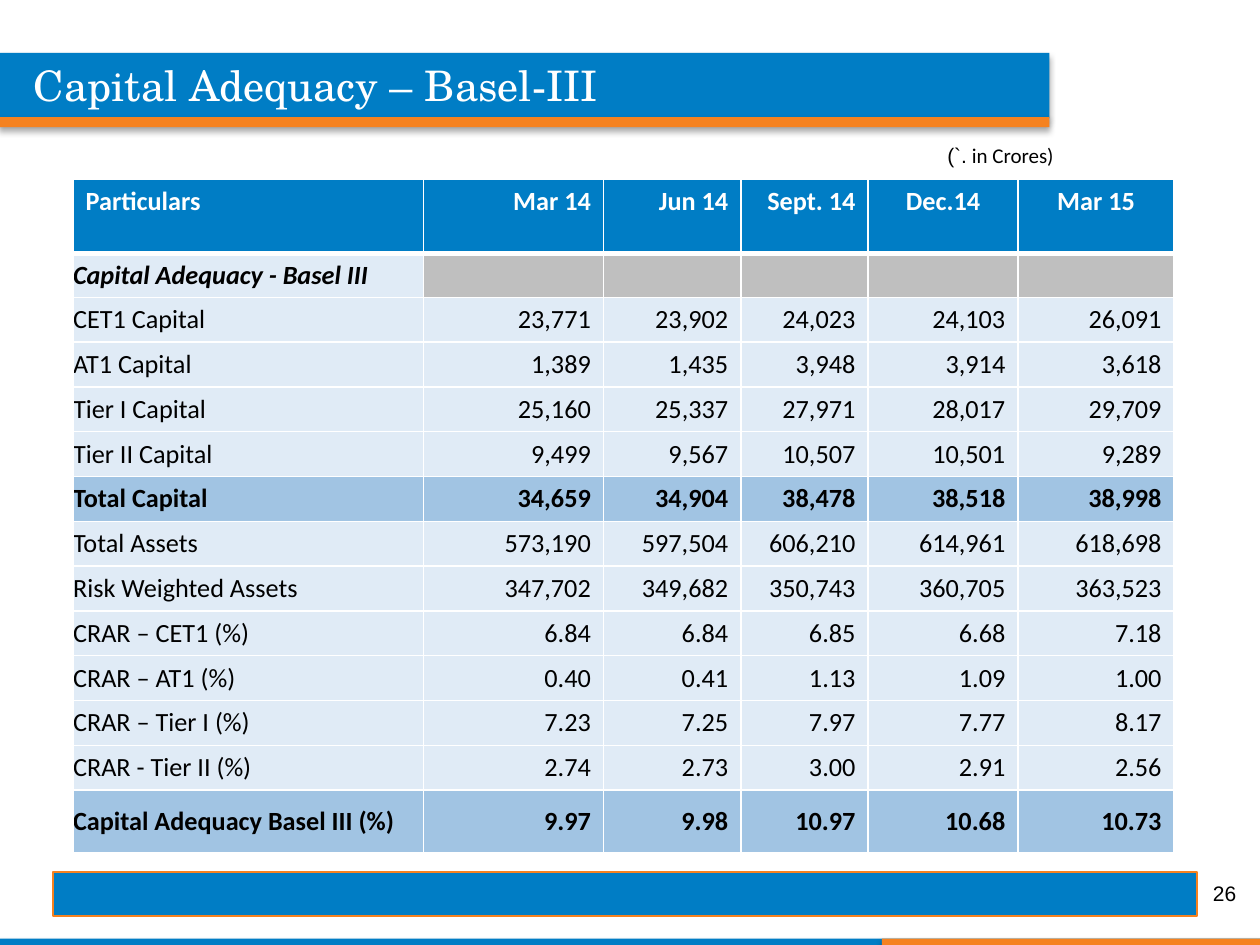
from pptx import Presentation
from pptx import util as u
from pptx.dml.color import RGBColor
from pptx.enum import shapes, text
from pptx.oxml import parse_xml
from pptx.oxml.ns import nsdecls

BLUE, ORANGE, WHITE, BLACK = "007DC5", "F58220", "FFFFFF", "000000"
PALE, MID, GREY = "E0EBF6", "A1C4E3", "BFBFBF"
LEFT, MIDDLE, RIGHT = text.PP_ALIGN.LEFT, text.PP_ALIGN.CENTER, text.PP_ALIGN.RIGHT

HEAD = ["Particulars", "Mar 14", "Jun 14", "Sept. 14", "Dec.14", "Mar 15"]
ROWS = [
    ["Capital Adequacy - Basel III", "", "", "", "", ""],
    ["CET1 Capital", "23,771", "23,902", "24,023", "24,103", "26,091"],
    ["AT1 Capital", "1,389", "1,435", "3,948", "3,914", "3,618"],
    ["Tier I Capital", "25,160", "25,337", "27,971", "28,017", "29,709"],
    ["Tier II Capital", "9,499", "9,567", "10,507", "10,501", "9,289"],
    ["Total Capital", "34,659", "34,904", "38,478", "38,518", "38,998"],
    ["Total Assets", "573,190", "597,504", "606,210", "614,961", "618,698"],
    ["Risk Weighted Assets", "347,702", "349,682", "350,743", "360,705", "363,523"],
    ["CRAR – CET1 (%)", "6.84", "6.84", "6.85", "6.68", "7.18"],
    ["CRAR – AT1 (%)", "0.40", "0.41", "1.13", "1.09", "1.00"],
    ["CRAR – Tier I (%)", "7.23", "7.25", "7.97", "7.77", "8.17"],
    ["CRAR - Tier II (%)", "2.74", "2.73", "3.00", "2.91", "2.56"],
    ["Capital Adequacy Basel III (%)", "9.97", "9.98", "10.97", "10.68", "10.73"],
]
TOTALS = ("Total Capital", "Capital Adequacy Basel III (%)")
WIDTHS = [2.78, 1.43, 1.09, 1.01, 1.19, 1.24]
HEIGHTS = [0.59] + [0.35] * 12 + [0.5]


def rgb(code):
    return RGBColor.from_string(code)


class Deck:
    def __init__(self):
        self.prs = Presentation()
        self.prs.slide_width, self.prs.slide_height = u.Inches(10), u.Inches(7.5)
        self.slide = self.prs.slides.add_slide(self.prs.slide_layouts[6])

    def style(self, font, size, color, face="Calibri", bold=False, italic=False):
        font.name, font.size, font.color.rgb = face, u.Pt(size), rgb(color)
        font.bold, font.italic = bold, italic

    def bar(self, x, y, w, h, color, line=None, shadow=True):
        box = self.slide.shapes.add_shape(
            shapes.MSO_SHAPE.RECTANGLE, *map(u.Inches, (x, y, w, h)))
        box.shadow.inherit = False
        box.fill.solid()
        box.fill.fore_color.rgb = rgb(color)
        if line:
            box.line.color.rgb = rgb(line)
            box.line.width = u.Pt(0.75)
        else:
            box.line.fill.background()
        if shadow:
            box.shadow._element.effectLst.append(parse_xml(
                f'<a:outerShdw {nsdecls("a")} blurRad="{u.Pt(3.5)}" '
                f'dist="{u.Pt(2.2)}" dir="5400000" rotWithShape="0">'
                f'<a:srgbClr val="{BLACK}"><a:alpha val="32000"/></a:srgbClr>'
                '</a:outerShdw>'))

    def label(self, x, y, w, h, runs, size, color, align=LEFT, anchor=text.MSO_ANCHOR.TOP):
        box = self.slide.shapes.add_textbox(*map(u.Inches, (x, y, w, h)))
        frame = box.text_frame
        frame.word_wrap, frame.vertical_anchor = True, anchor
        para = frame.paragraphs[0]
        para.alignment = align
        for words, face in runs:
            run = para.add_run()
            run.text = words
            self.style(run.font, size, color, face)

    def edges(self, cell, top=1, bottom=1):
        props = cell._tc.get_or_add_tcPr()
        for side, width in zip("LRTB", (1, 1, top, bottom)):
            props.append(parse_xml(
                f'<a:ln{side} {nsdecls("a")} w="{u.Pt(width)}"><a:solidFill>'
                f'<a:srgbClr val="{WHITE}"/></a:solidFill></a:ln{side}>'))

    def cell(self, cell, words, fill, align, pad, anchor, **look):
        cell.fill.solid()
        cell.fill.fore_color.rgb = rgb(fill)
        cell.margin_left = cell.margin_right = u.Inches(0.1 if pad else 0)
        cell.margin_top = cell.margin_bottom = u.Inches(0.05 if pad else 0)
        cell.vertical_anchor = anchor
        para = cell.text_frame.paragraphs[0]
        para.alignment = align
        if words:
            para.text = words
            self.style(para.font, 15, **look)

    def table(self, x, y):
        grid = self.slide.shapes.add_table(
            len(HEIGHTS), len(WIDTHS), u.Inches(x), u.Inches(y),
            u.Inches(sum(WIDTHS)), u.Inches(sum(HEIGHTS))).table
        for col, width in zip(grid.columns, WIDTHS):
            col.width = u.Inches(width)
        for row, height in zip(grid.rows, HEIGHTS):
            row.height = u.Inches(height)
        # Header row
        aligns = [LEFT] + [RIGHT] * 3 + [MIDDLE] * 2
        for c, (words, align) in enumerate(zip(HEAD, aligns)):
            self.edges(grid.cell(0, c), bottom=3)
            self.cell(grid.cell(0, c), words, BLUE, align, True,
                      text.MSO_ANCHOR.TOP, color=WHITE, bold=True)
        # Body rows
        for r, row in enumerate(ROWS, 1):
            total = row[0] in TOTALS
            for c, words in enumerate(row):
                fill = MID if total else PALE if words else GREY
                self.edges(grid.cell(r, c), top=3 if r == 1 else 1)
                self.cell(grid.cell(r, c), words, fill, RIGHT if c else LEFT,
                          bool(c and words), text.MSO_ANCHOR.MIDDLE,
                          color=BLACK, bold=total or r == 1, italic=r == 1)


def main():
    deck = Deck()
    # Bottom stripe, title band and footer bar
    deck.bar(0, 7.45, 10, 0.05, BLUE)
    deck.bar(7, 7.45, 3, 0.05, ORANGE)
    deck.bar(0, 0.42, 8.33, 0.52, BLUE)
    deck.bar(0, 0.93, 8.33, 0.08, ORANGE)
    deck.bar(0.42, 6.92, 9.08, 0.35, BLUE, line=ORANGE, shadow=False)
    # Capital figures
    deck.table(0.58, 1.42)
    # Title, page number and unit note
    deck.label(0.17, 0.42, 6.75, 0.5,
               [("Capital Adequacy – Basel-III", "TeX Gyre Schola")], 24, WHITE)
    deck.label(7.58, 6.89, 2.33, 0.4, [("26", "Arial")], 12, BLACK,
               RIGHT, text.MSO_ANCHOR.MIDDLE)
    deck.label(7.42, 1.08, 1.16, 0.3,
               [("(`.", "Arial"), (" in Crores)", "Calibri")], 12, BLACK)
    deck.prs.save("out.pptx")


if __name__ == "__main__":
    main()
